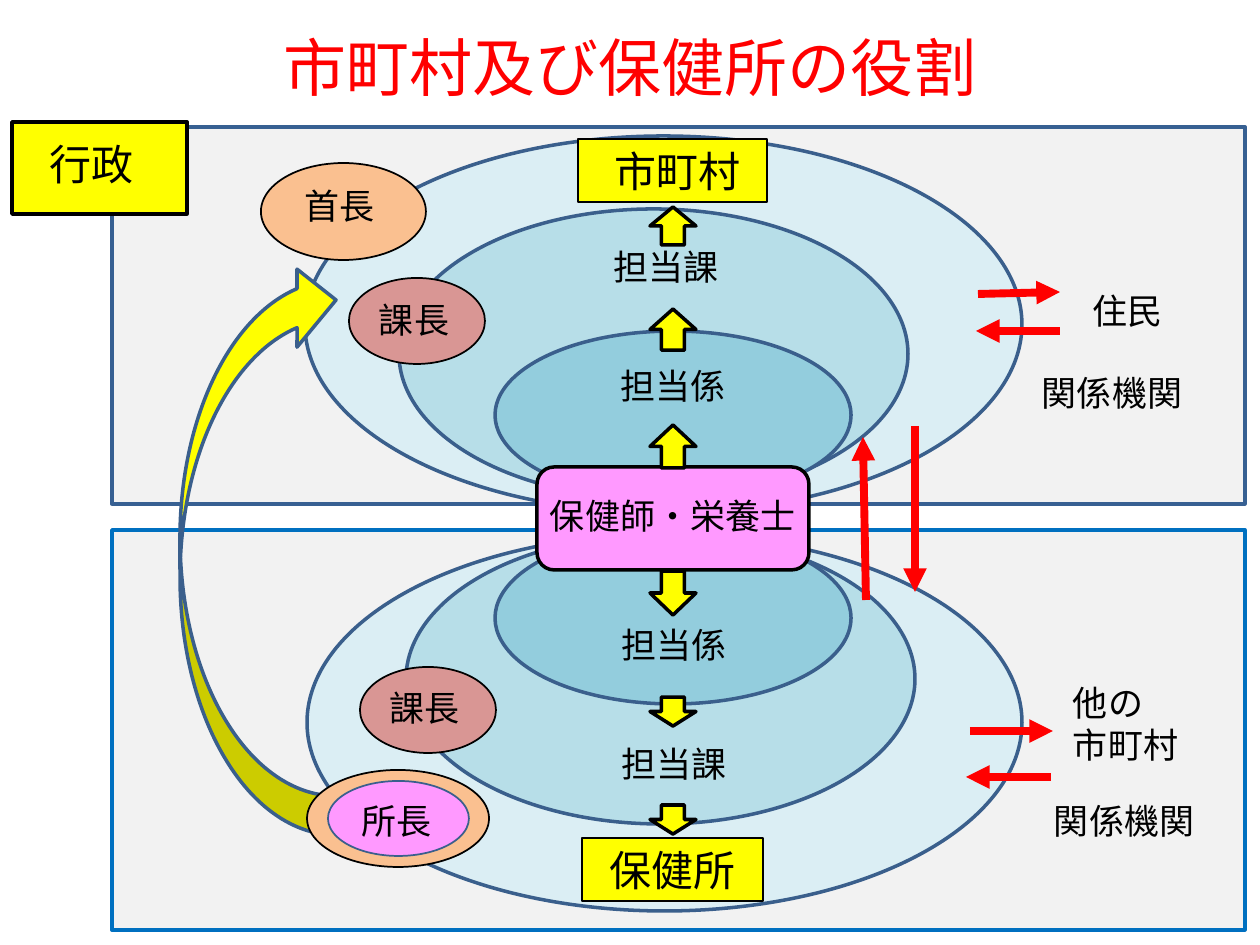
from lxml.etree import SubElement
from pptx import Presentation
from pptx.dml.color import RGBColor
from pptx.enum.shapes import MSO_CONNECTOR, MSO_SHAPE
from pptx.enum.text import MSO_ANCHOR, PP_ALIGN
from pptx.oxml.ns import qn
from pptx.util import Emu, Pt

PX = 914400 / 126
BLACK = RGBColor(0x00, 0x00, 0x00)
RED = RGBColor(0xFF, 0x00, 0x00)
YELLOW = RGBColor(0xFF, 0xFF, 0x00)
PINK = RGBColor(0xFF, 0x99, 0xFF)
ORANGE = RGBColor(0xFA, 0xC0, 0x90)
ROSE = RGBColor(0xD9, 0x96, 0x94)
GREY = RGBColor(0xF2, 0xF2, 0xF2)
PALE = RGBColor(0xDB, 0xEE, 0xF4)
LIGHT = RGBColor(0xB7, 0xDE, 0xE8)
TEAL = RGBColor(0x93, 0xCD, 0xDD)
NAVY = RGBColor(0x3A, 0x5F, 0x8C)
STEEL = RGBColor(0x37, 0x60, 0x92)
BLUE = RGBColor(0x00, 0x70, 0xC0)

LEFT, CENTER = PP_ALIGN.LEFT, PP_ALIGN.CENTER
INSET = 13


def px(*values):
    return [Emu(round(v * PX)) for v in values]


def write(sp, text, size, align=LEFT, color=BLACK, anchor=MSO_ANCHOR.TOP, inset=INSET):
    tf = sp.text_frame
    tf.word_wrap = True
    tf.vertical_anchor = anchor
    tf.margin_left = px(inset)[0]
    tf.text = text
    for p in tf.paragraphs:
        p.alignment = align
        p.font.size = Pt(size)
        p.font.name = "Calibri"
        p.font.color.rgb = color


def add_label(slide, box, text, size=20, **style):
    write(slide.shapes.add_textbox(*px(*box)), text, size, **style)


def add_figure(slide, kind, box, fill, line=BLACK, width=2):
    sp = slide.shapes.add_shape(kind, *px(*box))
    sp.shadow.inherit = False
    sp.fill.solid()
    sp.fill.fore_color.rgb = fill
    sp.line.color.rgb = line
    sp.line.width = Pt(width)
    return sp


def add_oval(slide, box, fill, line=BLACK, width=1):
    return add_figure(slide, MSO_SHAPE.OVAL, box, fill, line, width)


def add_sign(slide, box, text, inset=INSET):
    sp = add_figure(slide, MSO_SHAPE.RECTANGLE, box, YELLOW, width=0.75)
    write(sp, text, 24, CENTER, inset=inset)


def add_arrow(slide, x1, y1, x2, y2):
    line = slide.shapes.add_connector(MSO_CONNECTOR.STRAIGHT, *px(x1, y1, x2, y2))
    line.line.color.rgb = RED
    line.line.width = Pt(4.5)
    SubElement(line.line._get_or_add_ln(), qn("a:tailEnd"), type="triangle")
    SubElement(line._element.spPr, qn("a:effectLst"))


def add_report_arrow(slide):
    sp = add_figure(slide, MSO_SHAPE.CURVED_RIGHT_ARROW, (180, 261, 156, 574), YELLOW, NAVY)
    sp._element.spPr.find(qn("a:xfrm")).set("flipV", "1")


def add_layers(slide):
    for box, line in [((112, 127, 1133, 377), STEEL), ((112, 530, 1133, 400), BLUE)]:
        add_figure(slide, MSO_SHAPE.RECTANGLE, box, GREY, line)
    for box, fill in [
        ((305, 136, 717, 377), PALE), ((307, 534, 715, 377), PALE),
        ((399, 209, 509, 290), LIGHT), ((406, 534, 509, 290), LIGHT),
        ((495, 331, 356, 168), TEAL), ((495, 532, 356, 172), TEAL),
    ]:
        add_oval(slide, box, fill, NAVY, 2)


def add_offices(slide):
    add_figure(slide, MSO_SHAPE.RECTANGLE, (12, 122, 175, 92), YELLOW)
    add_label(slide, (28, 132, 135, 76), "行政", 24, inset=INSET + 9)
    add_oval(slide, (261, 163, 165, 97), ORANGE)
    for x, y in [(349, 278), (360, 667)]:
        add_oval(slide, (x, y, 136, 86), ROSE)
    for box, text in [
        ((292, 178, 102, 66), "首長"),
        ((366, 292, 105, 66), "課長"),
        ((377, 680, 116, 66), "課長"),
    ]:
        add_label(slide, box, text)
    add_sign(slide, (578, 139, 189, 63), "市町村", INSET + 9)
    add_sign(slide, (582, 838, 181, 63), "保健所")
    add_figure(slide, MSO_SHAPE.ROUNDED_RECTANGLE, (537, 467, 272, 103), PINK)
    add_label(slide, (537, 488, 272, 66), "保健師・栄養士")
    for box, text in [
        ((588, 358, 169, 66), "担当係"),
        ((578, 239, 175, 66), "担当課"),
        ((591, 736, 165, 66), "担当課"),
        ((595, 617, 157, 66), "担当係"),
    ]:
        add_label(slide, box, text, align=CENTER)


def add_flows(slide):
    for kind, y, height in [
        (MSO_SHAPE.UP_ARROW, 425, 43), (MSO_SHAPE.UP_ARROW, 207, 38),
        (MSO_SHAPE.UP_ARROW, 309, 41), (MSO_SHAPE.DOWN_ARROW, 571, 44),
        (MSO_SHAPE.DOWN_ARROW, 697, 29), (MSO_SHAPE.DOWN_ARROW, 805, 29),
    ]:
        add_figure(slide, kind, (650, y, 46, height), YELLOW)
    for ends in [
        (915, 426, 915, 592), (866, 600, 863, 437),
        (978, 294, 1060, 292), (970, 731, 1053, 731),
        (1060, 331, 976, 331), (1051, 777, 966, 777),
    ]:
        add_arrow(slide, *ends)


def add_partners(slide):
    for box, text in [
        ((1080, 283, 106, 66), "住民"),
        ((1029, 365, 176, 66), "関係機関"),
        ((1060, 675, 157, 116), "他の\n市町村"),
        ((1041, 793, 185, 66), "関係機関"),
    ]:
        add_label(slide, box, text)


def add_director(slide):
    add_oval(slide, (307, 770, 182, 97), ORANGE)
    add_oval(slide, (328, 781, 141, 75), PINK, NAVY)
    add_label(slide, (349, 793, 117, 66), "所長")


def main():
    prs = Presentation()
    prs.slide_width, prs.slide_height = px(1260, 945)
    slide = prs.slides.add_slide(prs.slide_layouts[6])
    add_label(slide, (63, -13, 1134, 158), "市町村及び保健所の役割", 36,
              align=CENTER, color=RED, anchor=MSO_ANCHOR.MIDDLE)
    add_layers(slide)
    add_offices(slide)
    add_flows(slide)
    add_partners(slide)
    add_report_arrow(slide)
    add_director(slide)
    prs.save("out.pptx")


if __name__ == "__main__":
    main()
